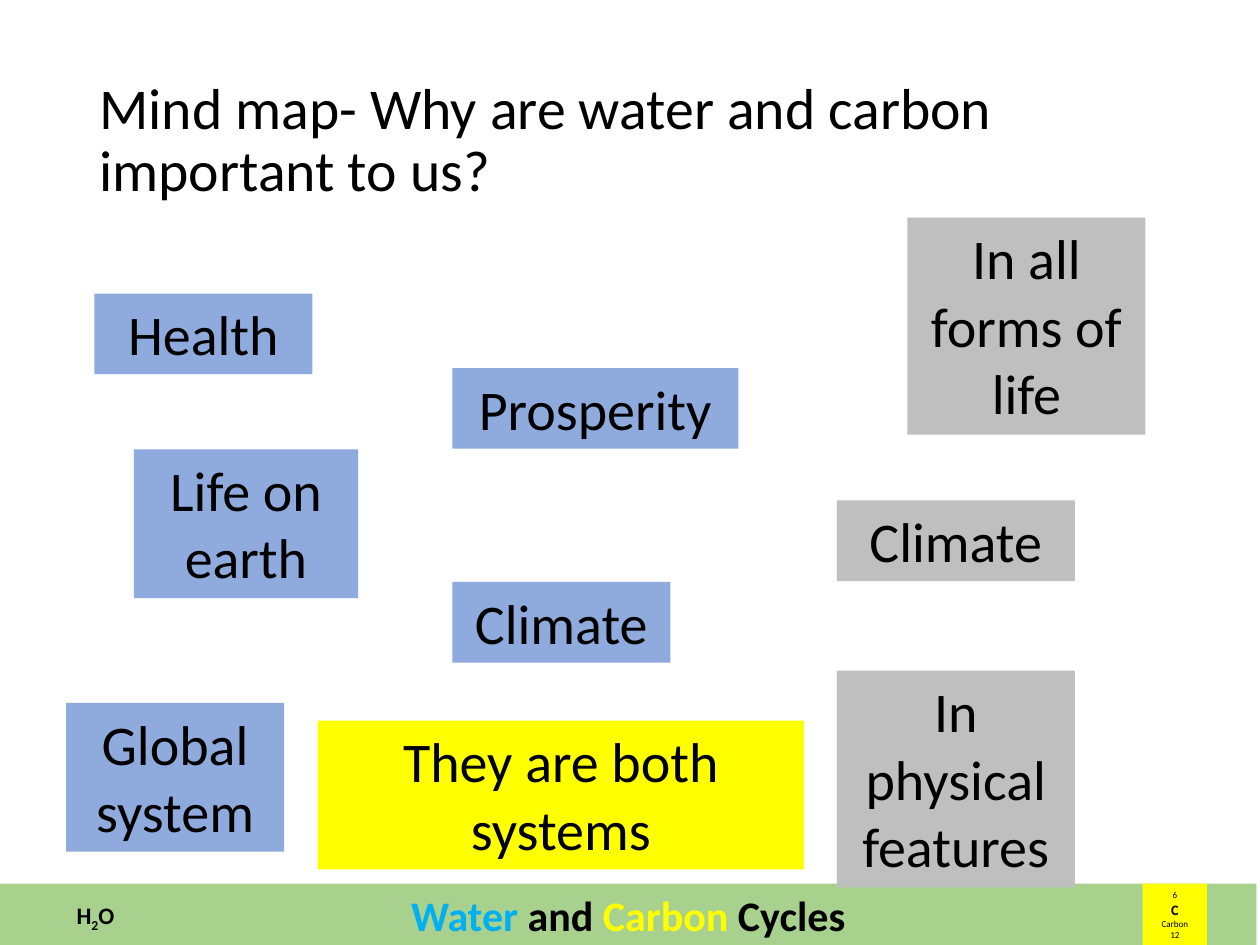
from dataclasses import dataclass
from typing import Optional

import pptx
import pptx.dml.color
import pptx.enum.shapes
import pptx.enum.text
import pptx.util

Pt = pptx.util.Pt
RGB = pptx.dml.color.RGBColor.from_string
ALIGN = pptx.enum.text.PP_ALIGN
ANCHOR = pptx.enum.text.MSO_ANCHOR


@dataclass(frozen=True)
class Theme:
    font: str = "Calibri"
    text: str = "000000"
    blue: str = "8FAADC"
    grey: str = "BFBFBF"
    green: str = "A9D18E"
    yellow: str = "FFFF00"
    water: str = "00B0F0"
    title: float = 33
    idea: float = 32
    footer: float = 24
    formula: float = 13.5
    symbol: float = 8.2
    detail: float = 5.2


THEME = Theme()


@dataclass(frozen=True)
class Box:
    left: float
    top: float
    width: float
    height: float
    fill: Optional[str] = None


@dataclass(frozen=True)
class Idea:
    text: str
    left: float
    top: float
    width: float
    fill: str
    lines: int = 1

    @property
    def box(self) -> Box:
        margins, line_height = 7.2, 38.9
        return Box(self.left, self.top, self.width,
                   margins + line_height * self.lines, self.fill)


IDEAS = [
    Idea("Health", 54, 167.8, 124.6, THEME.blue),
    Idea("Prosperity", 258.5, 210.4, 163.5, THEME.blue),
    Idea("Life on earth", 76.5, 256.8, 128.2, THEME.blue, lines=2),
    Idea("Climate", 258.5, 332.6, 124.6, THEME.blue),
    Idea("Global system", 37.8, 401.6, 124.6, THEME.blue, lines=2),
    Idea("In all forms of life", 518.6, 124.4, 136, THEME.grey, lines=3),
    Idea("In physical features", 478.2, 383.2, 136, THEME.grey, lines=3),
    Idea("Climate", 478.2, 286, 136, THEME.grey),
    Idea("They are both systems", 181.6, 411.8, 277.9, THEME.yellow, lines=2),
]


def add_box(s, box: Box, anchor=ANCHOR.TOP, wrap: bool = True):
    """Add a filled rectangle, or a text box if there is no fill; return its frame."""
    place = [Pt(v) for v in (box.left, box.top, box.width, box.height)]
    if box.fill:
        sp = s.shapes.add_shape(pptx.enum.shapes.MSO_SHAPE.RECTANGLE, *place)
        sp.shadow.inherit = False
        sp.fill.solid()
        sp.fill.fore_color.rgb = RGB(box.fill)
        sp.line.fill.background()
    else:
        sp = s.shapes.add_textbox(*place)
    tf = sp.text_frame
    tf.word_wrap = wrap
    tf.vertical_anchor = anchor
    return tf


def add_text(p, text: str, *, size: float, color: str = THEME.text,
             bold: bool = False, align=ALIGN.CENTER, subscript: bool = False) -> None:
    p.alignment = align
    r = p.add_run()
    r.text = text
    r.font.name = THEME.font
    r.font.size = Pt(size)
    r.font.bold = bold
    r.font.color.rgb = RGB(color)
    if subscript:
        r._r.get_or_add_rPr().set("baseline", "-25000")


def draw_footer(s) -> None:
    top, height = 505, 36
    p = add_box(s, Box(0, top, 718, height, THEME.green)).paragraphs[0]
    for text, color in (("Water", THEME.water), (" and ", THEME.text),
                        ("Carbon", THEME.yellow), (" Cycles", THEME.text)):
        add_text(p, text, size=THEME.footer, color=color, bold=True)

    tf = add_box(s, Box(653, top, 36.7, height, THEME.yellow))
    for i, text in enumerate(("6", "C", "Carbon", "12")):
        p = tf.add_paragraph() if i else tf.paragraphs[0]
        is_symbol = text == "C"
        add_text(p, text, size=THEME.symbol if is_symbol else THEME.detail,
                 bold=is_symbol)

    p = add_box(s, Box(36.7, 511.2, 37.4, 23.8), wrap=False).paragraphs[0]
    for text in "H2O":
        add_text(p, text, size=THEME.formula, bold=True, align=ALIGN.LEFT,
                 subscript=text.isdigit())


def draw_title(s) -> None:
    p = add_box(s, Box(49.7, 28.8, 620.6, 104.4), ANCHOR.MIDDLE).paragraphs[0]
    p.line_spacing = 0.9
    add_text(p, "Mind map- Why are water and carbon important to us?",
             size=THEME.title, align=ALIGN.LEFT)


def draw_idea(s, idea: Idea) -> None:
    add_text(add_box(s, idea.box).paragraphs[0], idea.text, size=THEME.idea)


def main() -> None:
    prs = pptx.Presentation()
    prs.slide_width, prs.slide_height = Pt(720), Pt(540)
    s = prs.slides.add_slide(prs.slide_layouts[6])
    draw_footer(s)
    draw_title(s)
    for idea in IDEAS:
        draw_idea(s, idea)
    prs.save("out.pptx")


if __name__ == "__main__":
    main()
